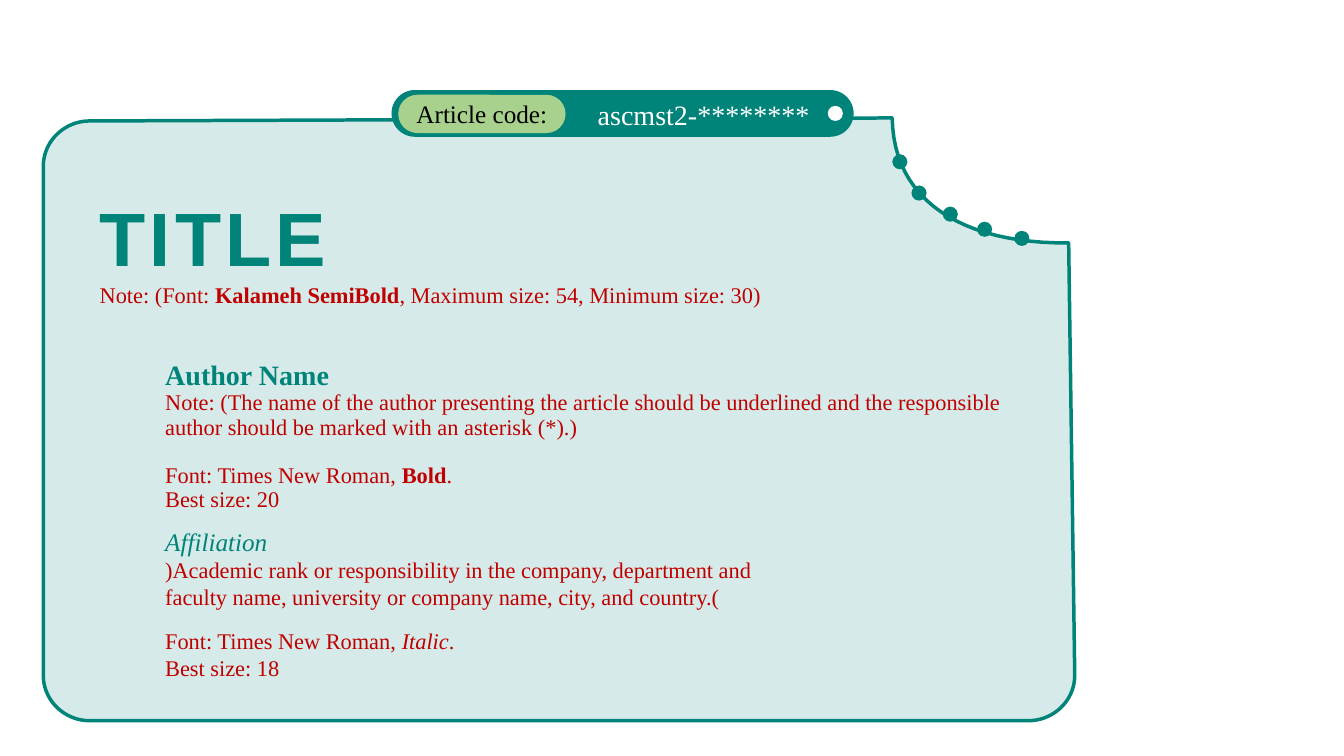
from dataclasses import dataclass

from lxml import etree
from pptx import Presentation
from pptx import util as u
from pptx.dml.color import RGBColor
from pptx.enum import shapes, text
from pptx.oxml import ns


@dataclass(frozen=True)
class Theme:
    teal: RGBColor = RGBColor(0x00, 0x84, 0x79)
    green: RGBColor = RGBColor(0xA9, 0xD1, 0x8E)
    red: RGBColor = RGBColor(0xC0, 0x00, 0x00)
    white: RGBColor = RGBColor(0xFF, 0xFF, 0xFF)
    black: RGBColor = RGBColor(0x00, 0x00, 0x00)
    serif: str = "Times New Roman"
    sans: str = "Arial"
    title: int = 54
    heading: int = 20
    label: int = 18
    note: int = 16


theme = Theme()
prs = Presentation()
prs.slide_width = u.Inches(13.33)
prs.slide_height = u.Inches(7.5)
slide = prs.slides.add_slide(prs.slide_layouts[6])


def add_plain(kind, left, top, width, height, color):
    shape = slide.shapes.add_shape(
        kind, u.Inches(left), u.Inches(top), u.Inches(width), u.Inches(height))
    shape.shadow.inherit = False
    shape.fill.solid()
    shape.fill.fore_color.rgb = color
    shape.line.fill.background()
    return shape


def write(frame, lines):
    frame.word_wrap = True
    for number, (runs, size, color, style) in enumerate(lines):
        paragraph = frame.paragraphs[0] if number == 0 else frame.add_paragraph()
        paragraph.font.name = style.get("font", theme.serif)
        paragraph.font.size = u.Pt(size)
        paragraph.font.color.rgb = color
        paragraph.font.bold = style.get("bold")
        paragraph.font.italic = style.get("italic")
        paragraph.alignment = style.get("align")
        paragraph.line_spacing = style.get("spacing")
        if "before" in style:
            paragraph.space_before = u.Pt(style["before"])
        for words, emphasis in runs:
            run = paragraph.add_run()
            run.text = words
            run.font.name = style.get("font", theme.serif)
            run.font.size = u.Pt(size)
            run.font.color.rgb = color
            if emphasis == "bold":
                run.font.bold = True
            if emphasis == "italic":
                run.font.italic = True


card_start = (10.6, 2.41)
card_path = [
    [(10.66, 6.7)],
    [(10.66, 6.95), (10.45, 7.15), (10.2, 7.15)],
    [(0.89, 7.15)],
    [(0.64, 7.15), (0.43, 6.95), (0.43, 6.7)],
    [(0.43, 1.65)],
    [(0.43, 1.4), (0.64, 1.2), (0.89, 1.2)],
    [(8.85, 1.17)],
    [(8.86, 1.98), (9.53, 2.42), card_start],
]
curve_steps = 24
outline = [card_start]
for segment in card_path:
    if len(segment) == 1:
        outline += segment
        continue
    controls = [outline[-1], *segment]
    for step in range(1, curve_steps + 1):
        t = step / curve_steps
        weights = ((1 - t) ** 3, 3 * t * (1 - t) ** 2, 3 * t ** 2 * (1 - t), t ** 3)
        outline.append(tuple(
            sum(w * point[axis] for w, point in zip(weights, controls)) for axis in (0, 1)))

points = [(u.Inches(x), u.Inches(y)) for x, y in outline]
builder = slide.shapes.build_freeform(*points[0])
builder.add_line_segments(points[1:], close=True)
card = builder.convert_to_shape()
card.shadow.inherit = False
card.fill.solid()
card.fill.fore_color.rgb = theme.teal
card_color = card.fill._xPr.find(ns.qn("a:solidFill")).find(ns.qn("a:srgbClr"))
etree.SubElement(card_color, ns.qn("a:alpha"), val="16000")
card.line.color.rgb = theme.teal
card.line.width = u.Pt(2.5)

code_bar = add_plain(shapes.MSO_SHAPE.ROUNDED_RECTANGLE, 3.89, 0.9, 4.57, 0.45, theme.teal)
code_bar.adjustments[0] = 0.5
code_bar.line.color.rgb = theme.teal
code_bar.line.width = u.Pt(1)

dots = [(8.21, 1.05, theme.white)] + [
    (left, top, theme.teal)
    for left, top in ((8.85, 1.53), (9.04, 1.84), (9.35, 2.05), (9.69, 2.2), (10.06, 2.29))]
for left, top, color in dots:
    add_plain(shapes.MSO_SHAPE.OVAL, left, top, 0.15, 0.15, color)

code_label = add_plain(shapes.MSO_SHAPE.ROUNDED_RECTANGLE, 3.95, 0.94, 1.66, 0.38, theme.green)
code_label.adjustments[0] = 0.5
code_label.text_frame.vertical_anchor = text.MSO_ANCHOR.MIDDLE
write(code_label.text_frame, [
    ([("Article code:", None)], theme.label, theme.black, {"align": text.PP_ALIGN.CENTER})])

code = [([("ascmst2-********", None)], theme.heading, theme.white, {})]
title = [
    ([("TITLE", None)], theme.title, theme.teal, {"font": theme.sans, "bold": True}),
    ([("Note: (Font: ", None), ("Kalameh SemiBold", "bold"),
      (", Maximum size: 54, Minimum size: 30)", None)], theme.note, theme.red, {}),
]
tight = {"spacing": 0.9}
author = [
    ([("Author Name", None)], theme.heading, theme.teal, {**tight, "bold": True}),
    ([("Note: (The name of the author presenting the article should be underlined and "
       "the responsible author should be marked with an asterisk (*).)", None)],
     theme.note, theme.red, tight),
    ([("Font: Times New Roman, ", None), ("Bold", "bold"), (".", None)],
     theme.note, theme.red, {**tight, "before": 17}),
    ([("Best size: 20", None)], theme.note, theme.red, tight),
]
affiliation = [
    ([("Affiliation", None)], theme.label, theme.teal, {"italic": True}),
    ([(")Academic rank or responsibility in the company, department and faculty name, "
       "university or company name, city, and country.(", None)], theme.note, theme.red, {}),
    ([("Font: Times New Roman, ", None), ("Italic", "italic"), (".", None)],
     theme.note, theme.red, {"before": 12}),
    ([("Best size: 18", None)], theme.note, theme.red, {}),
]
blocks = [
    (code, 5.83, 0.92, 2.43, 0.44, text.MSO_ANCHOR.TOP),
    (title, 0.89, 1.84, 7.51, 1.28, text.MSO_ANCHOR.TOP),
    (author, 1.54, 3.53, 8.82, 1.6, text.MSO_ANCHOR.BOTTOM),
    (affiliation, 1.54, 5.17, 6.67, 1.94, text.MSO_ANCHOR.TOP),
]
for lines, left, top, width, height, anchor in blocks:
    block = slide.shapes.add_textbox(
        u.Inches(left), u.Inches(top), u.Inches(width), u.Inches(height))
    block.text_frame.vertical_anchor = anchor
    write(block.text_frame, lines)
    if lines is title:
        title_run = block.text_frame.paragraphs[0].runs[0]
        title_run.font._element.set("spc", "300")

prs.save("out.pptx")
